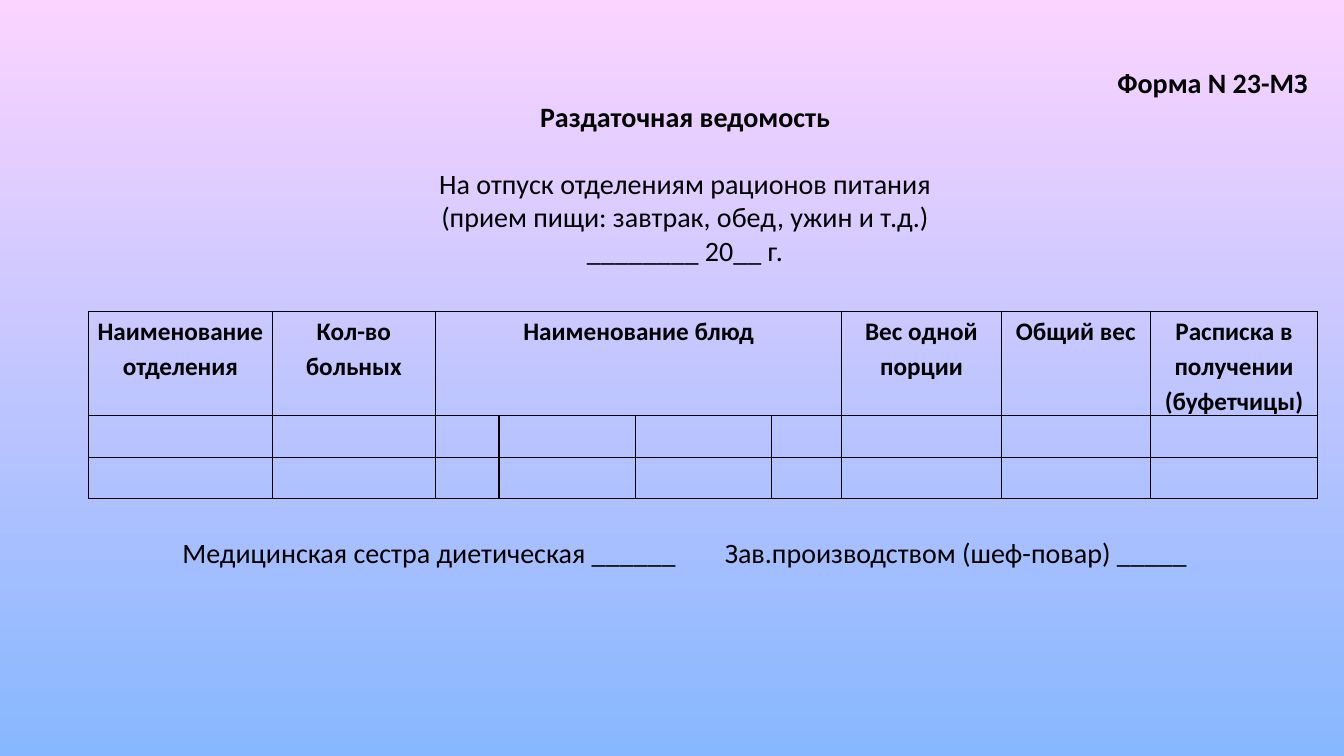
from dataclasses import dataclass

from lxml.etree import SubElement
from pptx import Presentation
from pptx.dml.color import RGBColor
from pptx.enum.text import MSO_AUTO_SIZE as AutoSize, PP_ALIGN as Align
from pptx.oxml.ns import qn
from pptx.util import Emu, Inches, Pt

COLORS = {"ink": "000000", "top": "FBD4FF", "bottom": "87B7FF"}
FONT = "Calibri"
TEXT_LINE = 24


@dataclass(frozen=True)
class FormLine:
    text: str
    align: Align = Align.CENTER
    bold: bool = False
    lines_before: int = 0
    tabs: tuple[float, ...] = ()


@dataclass(frozen=True)
class Heading:
    text: str
    widths: tuple[float, ...]


FORM_LINES = [
    FormLine("Форма N 23-МЗ", Align.RIGHT, bold=True),
    FormLine("Раздаточная ведомость", bold=True),
    FormLine("На отпуск отделениям рационов питания", lines_before=1),
    FormLine("(прием пищи: завтрак, обед, ужин и т.д.)"),
    FormLine("________ 20__ г."),
    FormLine("\tМедицинская сестра диетическая ______\tЗав.производством (шеф-повар) _____",
             Align.LEFT, lines_before=8, tabs=(1.19, 6.57)),
]
HEADINGS = [
    Heading("Наименование отделения", (1.82,)),
    Heading("Кол-во больных", (1.62,)),
    Heading("Наименование блюд", (0.63, 1.35, 1.35, 0.7)),
    Heading("Вес одной порции", (1.58,)),
    Heading("Общий вес", (1.48,)),
    Heading("Расписка в получении (буфетчицы)", (1.66,)),
]
ROW_HEIGHTS = (1.03, 0.41, 0.41)


def add_span(para, text: str, size: int, bold: bool) -> None:
    """Add one formatted run to a paragraph."""
    span = para.add_run()
    span.text = text
    span.font.name = FONT
    span.font.size = Pt(size)
    span.font.bold = bold
    span.font.color.rgb = RGBColor.from_string(COLORS["ink"])


def add_tabs(para, positions: tuple[float, ...]) -> None:
    """Give a paragraph left tab stops."""
    tab_list = SubElement(para._p.get_or_add_pPr(), qn("a:tabLst"))
    for position in positions:
        SubElement(tab_list, qn("a:tab"), pos=str(Inches(position)), algn="l")


def paint_background(page) -> None:
    """Fill the page with a gradient running from top to bottom."""
    fill = page.background.fill
    fill.gradient()
    fill.gradient_angle = 270
    for stop, name in zip(fill.gradient_stops, ("top", "bottom")):
        stop.color.rgb = RGBColor.from_string(COLORS[name])


def add_form_text(page) -> None:
    """Add the form heading and the signature line."""
    box = page.shapes.add_textbox(Inches(0.52), Inches(0.6), Inches(12.55), Inches(5.76))
    frame = box.text_frame
    frame.word_wrap = True
    frame.auto_size = AutoSize.SHAPE_TO_FIT_TEXT
    for index, line in enumerate(FORM_LINES):
        para = frame.add_paragraph() if index else frame.paragraphs[0]
        para.alignment = line.align
        if line.lines_before:
            para.space_before = Pt(line.lines_before * TEXT_LINE)
        if line.tabs:
            add_tabs(para, line.tabs)
        add_span(para, line.text, 20, line.bold)


def outline_cell(cell) -> None:
    """Give a cell thin borders and no fill."""
    properties = cell._tc.get_or_add_tcPr()
    for side in ("lnL", "lnR", "lnT", "lnB"):
        border = SubElement(properties, qn(f"a:{side}"), w=str(Pt(1)))
        paint = SubElement(border, qn("a:solidFill"))
        SubElement(paint, qn("a:srgbClr"), val=COLORS["ink"])
    cell.fill.background()


def add_ration_table(page) -> None:
    """Add the table of rations with its merged dish heading."""
    widths = [width for heading in HEADINGS for width in heading.widths]
    frame = page.shapes.add_table(len(ROW_HEIGHTS), len(widths), Inches(0.88), Inches(3.09),
                                  Inches(sum(widths)), Inches(sum(ROW_HEIGHTS)))
    table = frame.table
    table.first_row = table.horz_banding = False
    for column, width in zip(table.columns, widths):
        column.width = Inches(width)
    for row, height in zip(table.rows, ROW_HEIGHTS):
        row.height = Inches(height)
    for cell in table.iter_cells():
        outline_cell(cell)
    start = 0
    for heading in HEADINGS:
        cell = table.cell(0, start)
        para = cell.text_frame.paragraphs[0]
        para.alignment = Align.CENTER
        start += len(heading.widths)
        if len(heading.widths) > 1:
            cell.merge(table.cell(0, start - 1))
        else:
            cell.margin_left = cell.margin_right = Inches(0.07)
            cell.margin_top = cell.margin_bottom = Emu(0)
            para.line_spacing = 1.15
        add_span(para, heading.text, 18, True)


def main() -> None:
    """Build and save the deck."""
    deck = Presentation()
    deck.slide_width, deck.slide_height = Inches(13.33), Inches(7.5)
    page = deck.slides.add_slide(deck.slide_layouts[6])
    paint_background(page)
    add_form_text(page)
    add_ration_table(page)
    deck.save("out.pptx")


if __name__ == "__main__":
    main()
